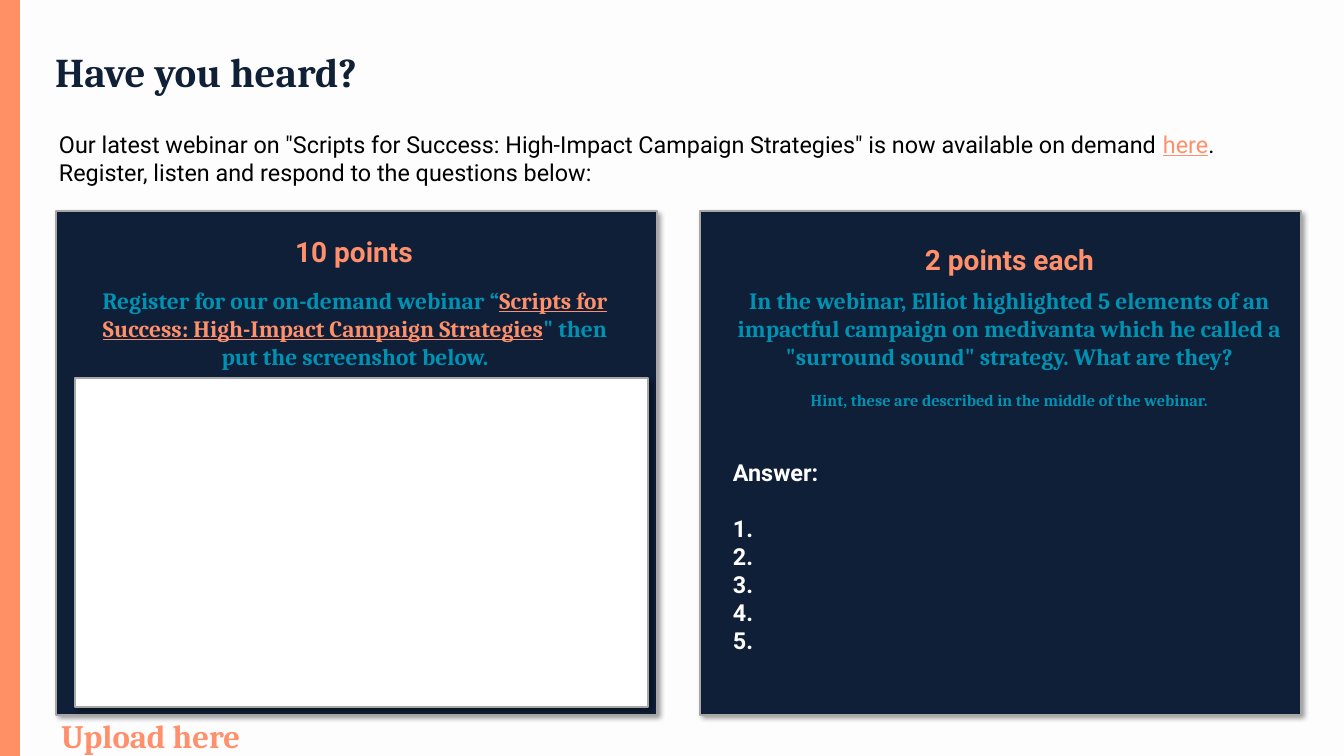
from lxml import etree
from pptx import Presentation
from pptx.dml.color import RGBColor
from pptx.enum.shapes import MSO_SHAPE as Shape
from pptx.enum.text import MSO_ANCHOR as Anchor, PP_ALIGN as Align
from pptx.oxml import parse_xml
from pptx.util import Pt

PX = 914400 // 84
SLIDE_W, SLIDE_H = 1344, 756
COLORS = {
    "page": "FDFDFD", "bar": "FF9066", "title": "102037", "panel": "0F1F38",
    "edge": "A7A7A7", "question": "0092B2", "points": "FF906B",
    "link": "FE906B", "white": "FFFFFF", "black": "000000",
}

# Text styles: font, size, bold, colour
STYLES = {
    "title": ("Cambria", 35, True, "title"),
    "intro": ("Roboto", 20, False, "black"),
    "points": ("Roboto", 24, True, "points"),
    "question": ("Cambria", 20, True, "question"),
    "hint": ("Cambria", 14, True, "question"),
    "answer": ("Roboto", 20, True, "white"),
    "upload": ("Cambria", 28, True, "points"),
}

# Paragraphs: style, space before in points, runs as (words, is link)
TITLE = [("title", 0, [("Have you heard?", False)])]
INTRO = [
    ("intro", 0, [
        ('Our latest webinar on "Scripts for Success: High-Impact Campaign '
         'Strategies" is now available on demand ', False),
        ("here", True),
        (".", False),
    ]),
    ("intro", 0, [("Register, listen and respond to the questions below:", False)]),
]
REGISTER_POINTS = [("points", 0, [("10 points", False)])]
REGISTER = [("question", 0, [
    ("Register for our on-demand webinar “", False),
    ("Scripts for Success: High-Impact Campaign Strategies", True),
    ('" then put the screenshot below.', False),
])]
ELEMENT_POINTS = [("points", 0, [("2 points each", False)])]
ELEMENTS = [
    ("question", 0, [
        ("In the webinar, Elliot highlighted 5 elements of an impactful "
         "campaign on medivanta which he called a "
         '"surround sound" strategy. What are they?', False),
    ]),
    ("hint", 17, [("Hint, these are described in the middle of the webinar.", False)]),
]
ANSWERS = [("answer", 0, [("Answer:", False)])] + [
    ("answer", 24 if number == 1 else 0, [(f"{number}.", False)])
    for number in range(1, 6)
]
UPLOAD = [("upload", 0, [("Upload here", False)])]

# Layout in px: left, top, width, height
PANEL_LEFT, PANEL_TOP, PANEL_W, PANEL_H, PANEL_GAP = 56, 211, 601, 504, 43
SCREENSHOT_AREA = (75, 378, 573, 329)
QUESTION_TOP, POINTS_H = 282, 42
INSETS = (4, 4, 4, 4)
TEXTS = [
    (TITLE, (47, 23, 784, 103), Align.LEFT, (8, 8, 4, 8)),
    (INTRO, (55, 126, 1246, 65), Align.LEFT, INSETS),
    (REGISTER_POINTS, (156, 231, 396, POINTS_H), Align.CENTER, INSETS),
    (REGISTER, (90, QUESTION_TOP, 530, 93), Align.CENTER, INSETS),
    (ELEMENT_POINTS, (709, 239, PANEL_W, POINTS_H), Align.CENTER, INSETS),
    (ELEMENTS, (709, QUESTION_TOP, PANEL_W, 190), Align.CENTER, INSETS),
    (ANSWERS, (729, 454, 396, 232), Align.LEFT, INSETS),
    (UPLOAD, (53, 712, 283, 44), Align.LEFT, (8, 4, 8, 4)),
]
SHADOW = (
    '<a:effectLst xmlns:a="http://schemas.openxmlformats.org/drawingml/2006/main">'
    f'<a:outerShdw blurRad="{Pt(4)}" dist="{Pt(3)}" dir="{45 * 60000}" '
    'algn="tl" rotWithShape="0">'
    f'<a:srgbClr val="{COLORS["black"]}"><a:alpha val="40000"/></a:srgbClr>'
    '</a:outerShdw></a:effectLst>'
)


def rgb(name):
    return RGBColor.from_string(COLORS[name])


def emu(lengths):
    return [length * PX for length in lengths]


def add_block(slide, box, fill):
    block = slide.shapes.add_shape(Shape.RECTANGLE, *emu(box))
    block.shadow.inherit = False
    block.fill.solid()
    block.fill.fore_color.rgb = rgb(fill)
    block.line.fill.background()
    return block


def add_card(slide, box, fill):
    """Add a rectangle with a grey edge and a soft shadow."""
    card = add_block(slide, box, fill)
    card.line.color.rgb = rgb("edge")
    card.line.width = Pt(1)
    properties = card.element.spPr
    properties.remove(properties.find("{*}effectLst"))
    properties.append(parse_xml(SHADOW))


def add_text(slide, paragraphs, box, align, insets):
    frame = slide.shapes.add_textbox(*emu(box)).text_frame
    left, top, right, bottom = emu(insets)
    frame_format = {
        "word_wrap": True,
        "vertical_anchor": Anchor.MIDDLE if paragraphs is TITLE else Anchor.TOP,
        "margin_left": left, "margin_top": top,
        "margin_right": right, "margin_bottom": bottom,
    }
    for key, value in frame_format.items():
        setattr(frame, key, value)
    for index, (style, gap, runs) in enumerate(paragraphs):
        paragraph = frame.add_paragraph() if index else frame.paragraphs[0]
        paragraph.alignment = align
        if gap:
            paragraph.space_before = Pt(gap)
        if style == "title":
            paragraph.line_spacing = 0.9
        font_name, size, bold, color = STYLES[style]
        for words, is_link in runs:
            run = paragraph.add_run()
            run.text = words
            run_format = {"name": font_name, "size": Pt(size),
                          "bold": bold, "underline": is_link}
            for key, value in run_format.items():
                setattr(run.font, key, value)
            run.font.color.rgb = rgb("link" if is_link else color)


def main():
    deck = Presentation()
    deck.slide_width, deck.slide_height = emu((SLIDE_W, SLIDE_H))
    slide = deck.slides.add_slide(deck.slide_layouts[6])
    slide.background.fill.solid()
    slide.background.fill.fore_color.rgb = rgb("page")

    add_block(slide, (0, 0, 20, SLIDE_H), "bar")
    for column in range(2):
        left = PANEL_LEFT + column * (PANEL_W + PANEL_GAP)
        add_card(slide, (left, PANEL_TOP, PANEL_W, PANEL_H), "panel")
    add_card(slide, SCREENSHOT_AREA, "white")
    for text in TEXTS:
        add_text(slide, *text)
    deck.save("out.pptx")


if __name__ == "__main__":
    main()
